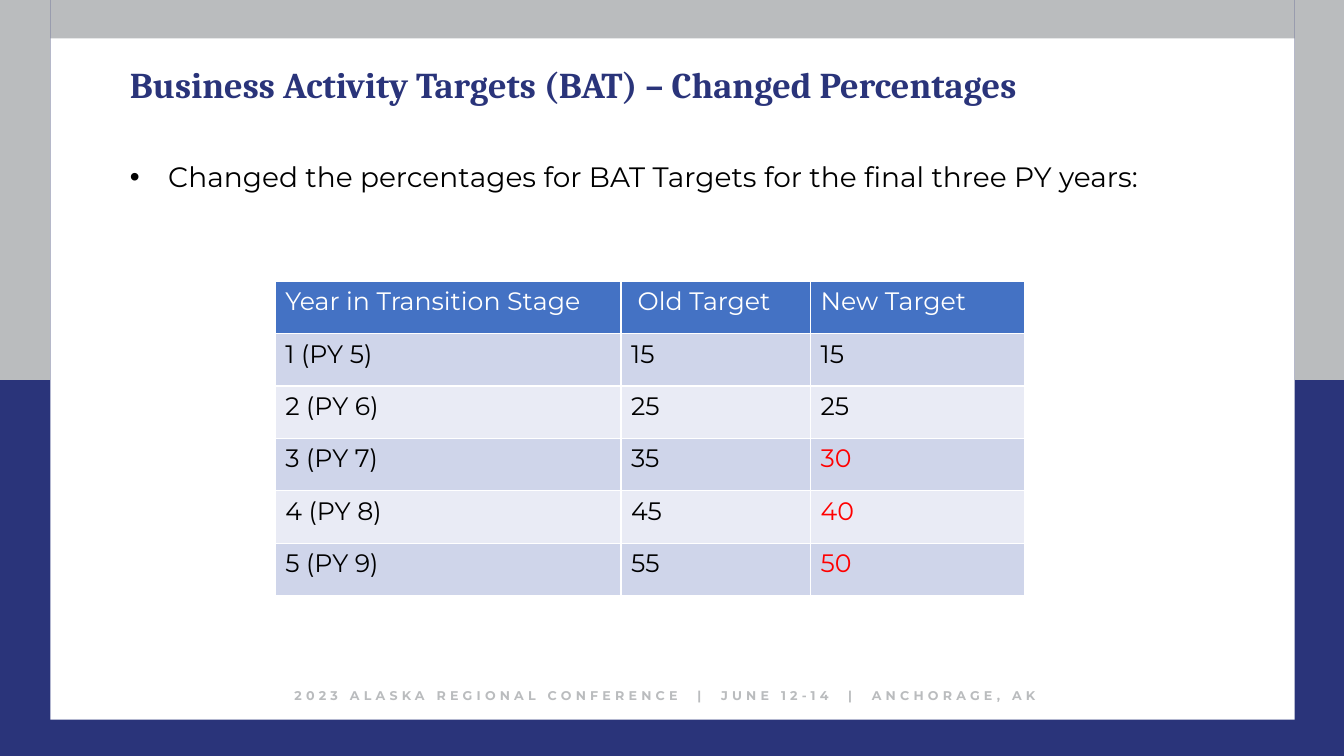
import pptx
import pptx.dml.color
import pptx.enum.shapes
import pptx.enum.text
import pptx.oxml
import pptx.oxml.ns
import pptx.util
from lxml import etree

WIDTH, HEIGHT = 13.33, 7.5
SIDE, TOP, BOTTOM, SPLIT = 0.5, 0.38, 7.14, 3.77
BLEED_X, BLEED_Y = 0.31, 0.16
LEFT, TEXT_WIDTH = 1.19, 10.95
GRAY, NAVY, WHITE, BLACK, RED = "BABCBE", "2A347A", "FFFFFF", "000000", "FF0000"
HEADER_BLUE, BANDS = "4472C4", ("CFD5EA", "E9EBF5")
BODY_FONT = "Montserrat"

COLUMN_WIDTHS = (3.43, 1.88, 2.12)
ROW_HEIGHT = 0.52
HEADINGS = ("Year in Transition Stage", " Old Target", "New Target")
TARGETS = (
    ("1 (PY 5)", 15, 15),
    ("2 (PY 6)", 25, 25),
    ("3 (PY 7)", 35, 30),
    ("4 (PY 8)", 45, 40),
    ("5 (PY 9)", 55, 50),
)


def color(value):
    return pptx.dml.color.RGBColor.from_string(value)


def inches(*lengths):
    return [pptx.util.Inches(length) for length in lengths]


def write(frame, text, size=18, font=BODY_FONT, ink=BLACK, bold=False,
          align="LEFT", line_spacing=None, tracking=None, bullet_indent=None):
    frame.word_wrap = True
    para = frame.paragraphs[0]
    para.alignment = getattr(pptx.enum.text.PP_ALIGN, align)
    if line_spacing:
        para.line_spacing = line_spacing
    span = para.add_run()
    span.text = text
    span.font.size = pptx.util.Pt(size)
    span.font.name = font
    span.font.bold = bold
    span.font.color.rgb = color(ink)
    if tracking:
        span.font._element.set("spc", str(tracking * 100))
    if bullet_indent:
        indent = pptx.util.Inches(bullet_indent)
        properties = para._p.get_or_add_pPr()
        properties.set("marL", str(indent))
        properties.set("indent", str(-indent))
        etree.SubElement(properties, pptx.oxml.ns.qn("a:buFont"), typeface="Arial")
        etree.SubElement(properties, pptx.oxml.ns.qn("a:buChar"), char="•")


def add_text(page, place, text, **style):
    box = page.shapes.add_textbox(*inches(*place))
    write(box.text_frame, text, **style)


def add_band(page, left, top, right, bottom, fill):
    band = page.shapes.add_shape(
        pptx.enum.shapes.MSO_SHAPE.RECTANGLE,
        *inches(left, top, right - left, bottom - top))
    band.shadow.inherit = False
    band.fill.solid()
    band.fill.fore_color.rgb = color(fill)
    band.line.fill.background()


def add_frame(page):
    """Bands bleed over the slide's edges; gray covers the upper half of the sides."""
    left, right = -BLEED_X, WIDTH + BLEED_X
    top, bottom = -BLEED_Y, HEIGHT + BLEED_Y
    add_band(page, left, top, right, TOP, GRAY)
    add_band(page, left, BOTTOM, right, bottom, NAVY)
    for end, fill in ((bottom, NAVY), (SPLIT, GRAY)):
        add_band(page, left, top, SIDE, end, fill)
        add_band(page, WIDTH - SIDE + 0.01, top, right, end, fill)


def outline_cell(cell, ink, points):
    properties = cell._tc.get_or_add_tcPr()
    for side in ("lnL", "lnR", "lnT", "lnB"):
        line = etree.SubElement(properties, pptx.oxml.ns.qn(f"a:{side}"),
                                w=str(pptx.util.Pt(points)))
        fill = etree.SubElement(line, pptx.oxml.ns.qn("a:solidFill"))
        etree.SubElement(fill, pptx.oxml.ns.qn("a:srgbClr"), val=ink)


def fill_cell(cell, text, fill, ink):
    outline_cell(cell, WHITE, 1)
    cell.fill.solid()
    cell.fill.fore_color.rgb = color(fill)
    write(cell.text_frame, text, ink=ink)


def add_target_table(page, left, top):
    """Targets that differ from the old ones are red."""
    row_count = len(TARGETS) + 1
    table = page.shapes.add_table(
        row_count, len(HEADINGS),
        *inches(left, top, sum(COLUMN_WIDTHS), row_count * ROW_HEIGHT)).table
    for column, width in zip(table.columns, COLUMN_WIDTHS):
        column.width = pptx.util.Inches(width)
    for column, heading in enumerate(HEADINGS):
        fill_cell(table.cell(0, column), heading, HEADER_BLUE, WHITE)
    for row, (year, old, new) in enumerate(TARGETS, start=1):
        band = BANDS[(row - 1) % 2]
        inks = (BLACK, BLACK, BLACK if new == old else RED)
        for column, (value, ink) in enumerate(zip((year, old, new), inks)):
            fill_cell(table.cell(row, column), str(value), band, ink)


def main():
    deck = pptx.Presentation()
    deck.slide_width, deck.slide_height = inches(WIDTH, HEIGHT)
    page = deck.slides.add_slide(deck.slide_layouts[6])
    add_frame(page)
    add_text(page, (SIDE, 6.77, WIDTH - 2 * SIDE + 0.01, 0.25),
             "2023 ALASKA REGIONAL CONFERENCE  |  JUNE 12-14  |  ANCHORAGE, AK  ",
             size=9, ink=GRAY, bold=True, align="CENTER", tracking=3)
    add_text(page, (LEFT, 1.57, TEXT_WIDTH, 5.04),
             "Changed the percentages for BAT Targets for the final three PY years:",
             size=20, line_spacing=0.9, bullet_indent=0.38)
    add_text(page, (LEFT, 0.62, TEXT_WIDTH, 0.51),
             "Business Activity Targets (BAT) – Changed Percentages",
             size=25.9, font="Cambria", ink=NAVY, bold=True, line_spacing=0.9)
    add_target_table(page, 2.73, 2.79)
    deck.save("out.pptx")


if __name__ == "__main__":
    main()
